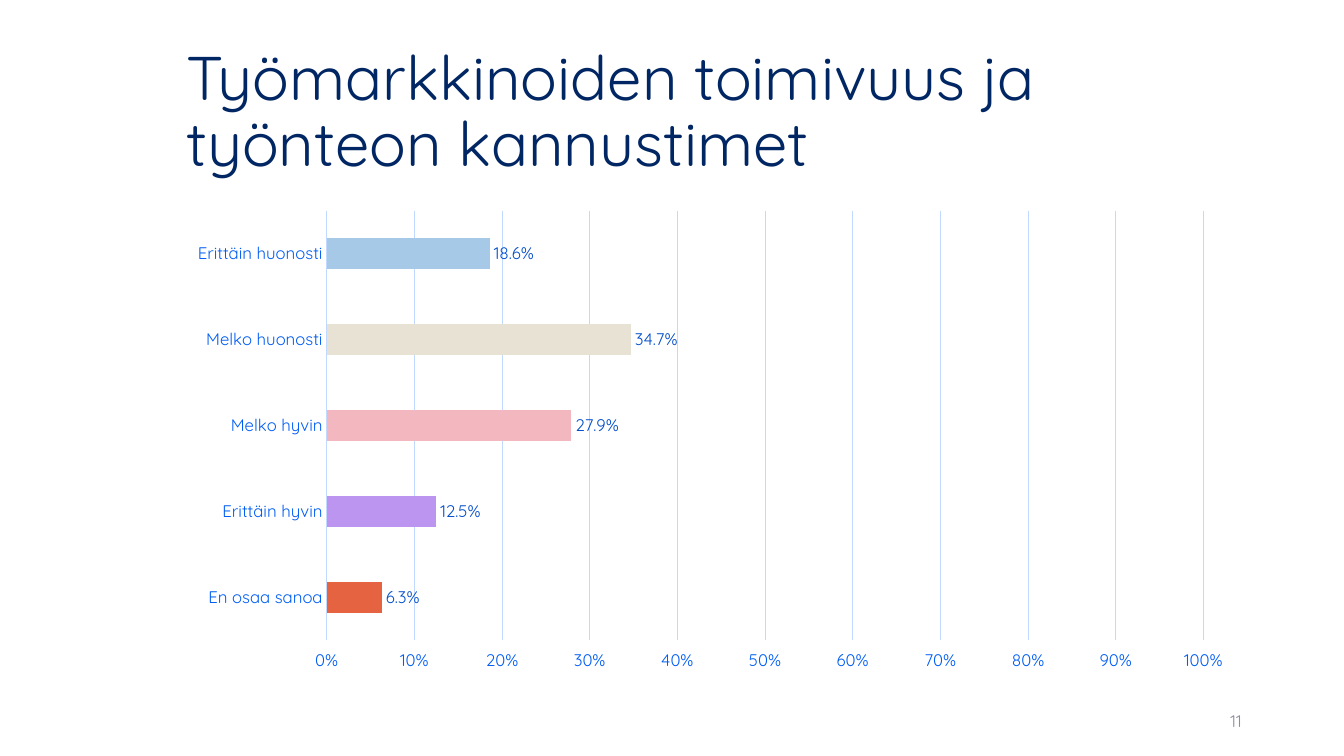
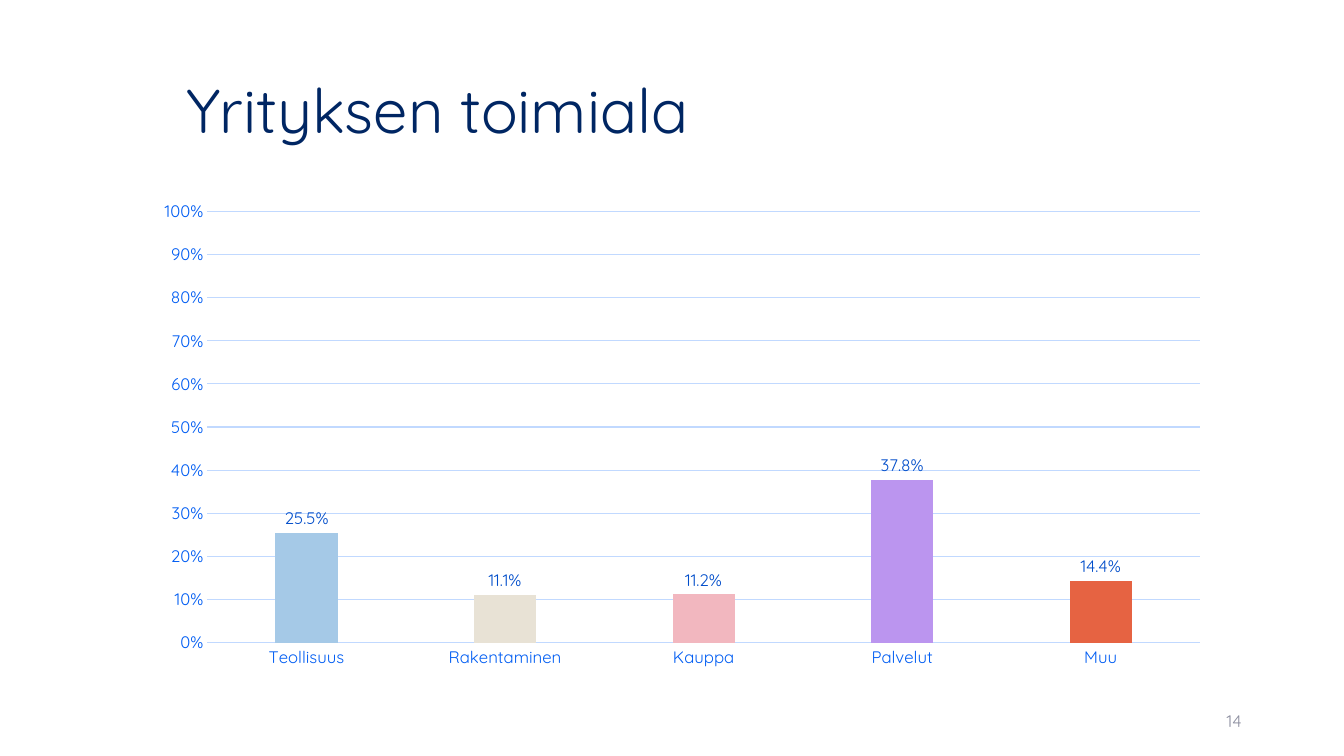
"""Builds two survey result slides, each with a title, a percentage chart and a page number."""
from pptx import Presentation
from pptx.chart.data import CategoryChartData
from pptx.dml.color import RGBColor
from pptx.enum.chart import XL_CHART_TYPE, XL_LABEL_POSITION, XL_TICK_LABEL_POSITION, XL_TICK_MARK
from pptx.enum.text import MSO_ANCHOR, MSO_AUTO_SIZE, PP_ALIGN
from pptx.oxml import parse_xml
from pptx.oxml.ns import nsdecls, qn
from pptx.util import Pt

FONT = "Quicksand"
COLORS = {
    "title": "002663",
    "axis": "005DF3",
    "label": "004DCA",
    "grid": "C1D9FF",
    "page": "8C8E9F",
}
BAR_COLORS = ["A5C9E7", "E8E2D5", "F2B7BF", "BB95EF", "E66342"]

SURVEYS = [
    {
        "title": "Työmarkkinoiden toimivuus ja työnteon kannustimet",
        "page": "11",
        "kind": XL_CHART_TYPE.BAR_CLUSTERED,
        "left": 126,
        "width": 762.7,
        "gap": 182,
        "overlap": 0,
        "plot": None,
        "answers": {
            "Erittäin huonosti": 0.186,
            "Melko huonosti": 0.347,
            "Melko hyvin": 0.279,
            "Erittäin hyvin": 0.125,
            "En osaa sanoa": 0.063,
        },
    },
    {
        "title": "Yrityksen toimiala",
        "page": "14",
        "kind": XL_CHART_TYPE.COLUMN_CLUSTERED,
        "left": 115.6,
        "width": 773.3,
        "gap": 219,
        "overlap": -27,
        "plot": {"x": 0.042, "y": 0.014, "w": 0.917, "h": 0.906},
        "answers": {
            "Teollisuus": 0.255,
            "Rakentaminen": 0.111,
            "Kauppa": 0.112,
            "Palvelut": 0.378,
            "Muu": 0.144,
        },
    },
]


def style_font(font, size, color):
    font.name = FONT
    font.size = Pt(size)
    font.color.rgb = RGBColor.from_string(COLORS[color])


def place_plot(chart, plot):
    area = chart.element.find(".//" + qn("c:plotArea"))
    for layout in area.findall(qn("c:layout")):
        area.remove(layout)
    sizes = "".join(f'<c:{side} val="{share}"/>' for side, share in plot.items())
    area.insert(0, parse_xml(
        f'<c:layout {nsdecls("c")}><c:manualLayout><c:layoutTarget val="inner"/>'
        f'<c:xMode val="edge"/><c:yMode val="edge"/>{sizes}</c:manualLayout></c:layout>'))


prs = Presentation()
prs.slide_width, prs.slide_height = Pt(960), Pt(540)

for survey in SURVEYS:
    slide = prs.slides.add_slide(prs.slide_layouts[5])

    title = slide.shapes.title
    title.left, title.top, title.width, title.height = Pt(126), Pt(28.8), Pt(762.5), Pt(104.4)
    title.text_frame.auto_size = MSO_AUTO_SIZE.NONE
    title.text_frame.vertical_anchor = MSO_ANCHOR.MIDDLE
    heading = title.text_frame.paragraphs[0]
    heading.alignment = PP_ALIGN.LEFT
    heading.line_spacing = 0.9
    run = heading.add_run()
    run.text = survey["title"]
    style_font(run.font, 44, "title")

    page_number = slide.shapes.add_textbox(Pt(678), Pt(500.4), Pt(216), Pt(28.8)).text_frame
    page_number.word_wrap = True
    page_number.vertical_anchor = MSO_ANCHOR.MIDDLE
    page_number.paragraphs[0].alignment = PP_ALIGN.RIGHT
    run = page_number.paragraphs[0].add_run()
    run.text = survey["page"]
    style_font(run.font, 12, "page")

    shares = CategoryChartData(number_format="0.0%")
    shares.categories = list(survey["answers"])
    shares.add_series("Series 1", list(survey["answers"].values()))
    chart = slide.shapes.add_chart(survey["kind"], Pt(survey["left"]), Pt(143.6),
                                   Pt(survey["width"]), Pt(342.7), shares).chart
    chart.has_title = False
    chart.has_legend = False
    style_font(chart.font, 10, "title")

    answer_axis, share_axis = chart.category_axis, chart.value_axis
    for axis in (answer_axis, share_axis):
        axis.major_tick_mark = axis.minor_tick_mark = XL_TICK_MARK.NONE
        style_font(axis.tick_labels.font, 12, "axis")
    answer_axis.has_major_gridlines = False
    share_axis.has_major_gridlines = True
    share_axis.minimum_scale, share_axis.maximum_scale = 0, 1
    share_axis.major_unit = 0.1
    share_axis.tick_labels.number_format = "0%"
    share_axis.tick_labels.number_format_is_linked = False
    share_axis.format.line.fill.background()
    for line in (answer_axis.format.line, share_axis.major_gridlines.format.line):
        line.color.rgb = RGBColor.from_string(COLORS["grid"])
        line.width = Pt(0.75)
    if survey["kind"] == XL_CHART_TYPE.BAR_CLUSTERED:
        answer_axis.reverse_order = True
        share_axis.tick_label_position = XL_TICK_LABEL_POSITION.HIGH

    bars = chart.plots[0]
    bars.vary_by_categories = False
    bars.gap_width = survey["gap"]
    bars.overlap = survey["overlap"]
    for index, color in enumerate(BAR_COLORS):
        fill = bars.series[0].points[index].format.fill
        fill.solid()
        fill.fore_color.rgb = RGBColor.from_string(color)

    labels = bars.series[0].data_labels
    labels.show_value = True
    labels.number_format = "0.0%"
    labels.number_format_is_linked = False
    labels.position = XL_LABEL_POSITION.OUTSIDE_END
    style_font(labels.font, 12, "label")

    if survey["plot"]:
        place_plot(chart, survey["plot"])

prs.save("out.pptx")
